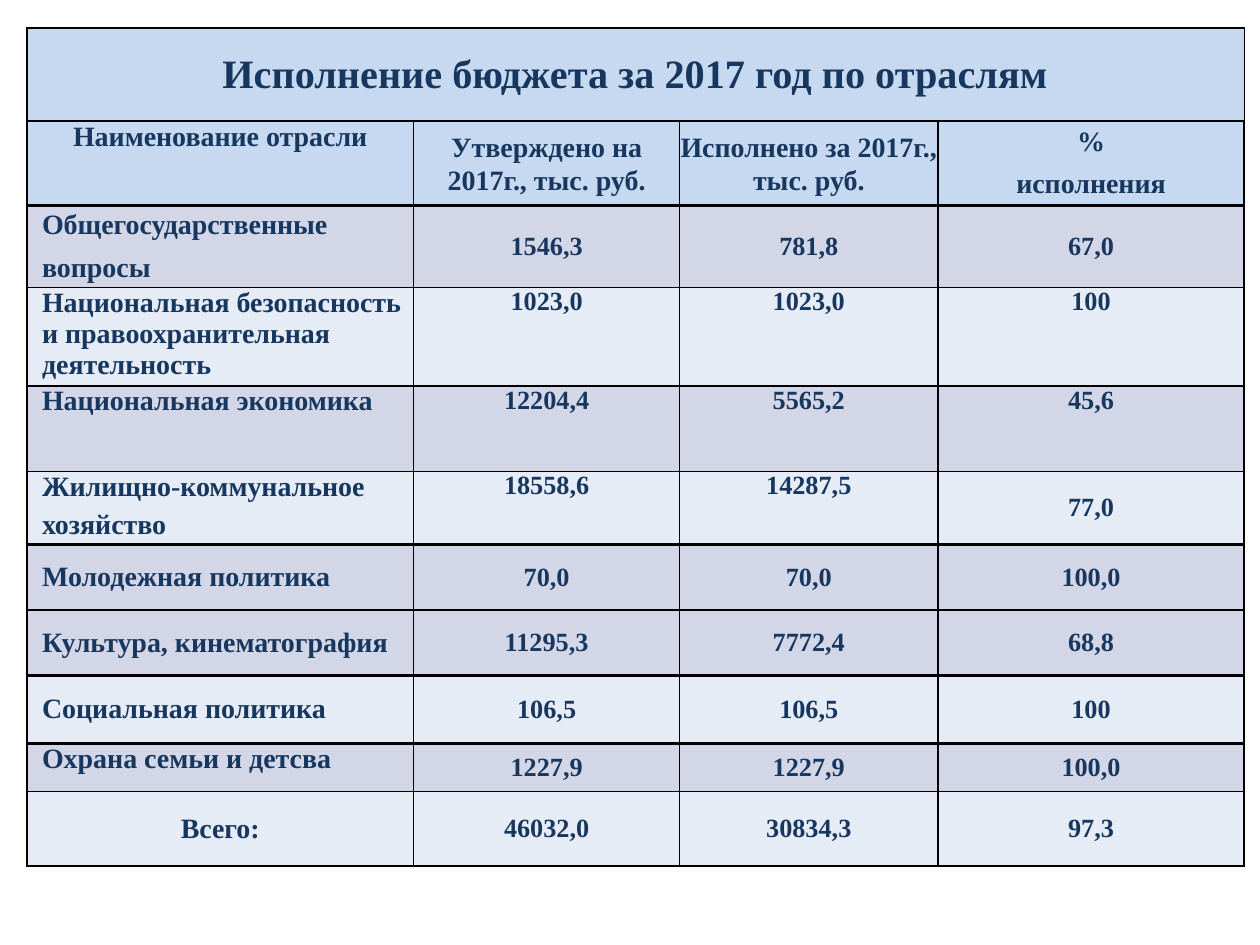
from pptx import Presentation
from pptx.dml.color import RGBColor as RGB
from pptx.enum.text import MSO_ANCHOR as Anchor, PP_ALIGN as Align
from pptx.oxml.ns import qn
from pptx.util import Pt
from lxml.etree import SubElement as Sub

FONT, INK, LINE = "Times New Roman", "17375E", "000000"
HEAD, DARK, PALE = "C6D9F1", "D2D6E7", "E6ECF6"
THICK, THIN = 1.5, 0.75
WIDTHS = [221, 152, 147.6, 175]

# Header cells: lines, line spacing, space after, anchored at top
HEADS = [
    (["Наименование отрасли"], None, 0, True),
    (["Утверждено на 2017г., тыс. руб."], 19.2, 0, False),
    (["Исполнено за 2017г., тыс. руб."], 19.2, 0, False),
    (["%", "исполнения"], None, 6.3, False),
]

# Branches: height, fill, bottom line, cells anchored at top, space after, name, values
ROWS = [
    (46.8, DARK, THIN, 0, 6.3, ["Общегосударственные", "вопросы"],
     ["1546,3", "781,8", "67,0"]),
    (56.2, PALE, THICK, 4, 0,
     ["Национальная безопасность и правоохранительная деятельность"],
     ["1023,0", "1023,0", "100"]),
    (49, DARK, THIN, 4, 0, ["Национальная экономика"],
     ["12204,4", "5565,2", "45,6"]),
    (41.8, PALE, THICK, 3, 4.2, ["Жилищно-коммунальное", "хозяйство"],
     ["18558,6", "14287,5", "77,0"]),
    (37.4, DARK, THIN, 0, 0, ["Молодежная политика"],
     ["70,0", "70,0", "100,0"]),
    (37.4, DARK, THICK, 0, 0, ["Культура, кинематография"],
     ["11295,3", "7772,4", "68,8"]),
    (38.9, PALE, THICK, 0, 0, ["Социальная политика"],
     ["106,5", "106,5", "100"]),
    (27.4, DARK, THIN, 1, 0, ["Охрана семьи и детсва"],
     ["1227,9", "1227,9", "100,0"]),
    (42.5, PALE, THICK, 0, 0, ["Всего:"],
     ["46032,0", "30834,3", "97,3"]),
]


def color(code):
    return RGB.from_string(code)


def border(cell, side, width):
    line = Sub(cell._tc.get_or_add_tcPr(), qn("a:ln" + side), w=str(Pt(width)))
    Sub(Sub(line, qn("a:solidFill")), qn("a:srgbClr"), val=LINE)


def frame(cell, col, above, below, fill):
    last = len(WIDTHS) - 1
    border(cell, "L", THICK if col == 0 else THIN)
    border(cell, "R", THICK if col == last else THIN)
    border(cell, "T", above)
    border(cell, "B", below)
    cell.fill.solid()
    cell.fill.fore_color.rgb = color(fill)


def write(cell, lines, size, top=False, indent=0, pitch=None, after=0):
    cell.margin_left = cell.margin_right = 0
    cell.margin_top = cell.margin_bottom = 0
    cell.vertical_anchor = Anchor.TOP if top else Anchor.MIDDLE
    text = cell.text_frame
    for i, line in enumerate(lines):
        para = text.add_paragraph() if i else text.paragraphs[0]
        para.alignment = Align.LEFT if indent else Align.CENTER
        if indent:
            para._p.get_or_add_pPr().set("marL", str(Pt(indent)))
        if pitch:
            para.line_spacing = Pt(pitch)
        if after and i < len(lines) - 1:
            para.space_after = Pt(after)
        run = para.add_run()
        run.text = line
        run.font.name, run.font.size, run.font.bold = FONT, Pt(size), True
        run.font.color.rgb = color(INK)


def make_grid(slide):
    tall = [53.3, 48.2] + [row[0] for row in ROWS]
    grid = slide.shapes.add_table(
        len(tall), len(WIDTHS), Pt(15.4), Pt(16),
        Pt(sum(WIDTHS)), Pt(sum(tall))).table
    grid.first_row = grid.horz_banding = False
    for col, width in zip(grid.columns, WIDTHS):
        col.width = Pt(width)
    for row, height in zip(grid.rows, tall):
        row.height = Pt(height)
    return grid


def fill_heads(grid):
    # Title across all columns
    for c in range(len(WIDTHS)):
        frame(grid.cell(0, c), c, THICK, THICK, HEAD)
    title = grid.cell(0, 0)
    title.merge(grid.cell(0, len(WIDTHS) - 1))
    write(title, ["Исполнение бюджета за 2017 год по отраслям"], 23)
    # Column headings
    for c, (lines, pitch, after, top) in enumerate(HEADS):
        cell = grid.cell(1, c)
        frame(cell, c, THICK, THICK, HEAD)
        write(cell, lines, 16, top, pitch=pitch, after=after)


def fill_rows(grid):
    above = THICK
    for r, (_, fill, below, tops, after, name, values) in enumerate(ROWS, 2):
        total = r == len(ROWS) + 1
        for c in range(len(WIDTHS)):
            cell = grid.cell(r, c)
            frame(cell, c, above, below, fill)
            if c == 0:
                write(cell, name, 16, c < tops, 0 if total else 8.64, after=after)
            else:
                write(cell, [values[c - 1]], 15, c < tops)
        above = below


def main():
    deck = Presentation()
    deck.slide_width, deck.slide_height = Pt(720), Pt(540)
    slide = deck.slides.add_slide(deck.slide_layouts[6])
    grid = make_grid(slide)
    fill_heads(grid)
    fill_rows(grid)
    deck.save("out.pptx")


if __name__ == "__main__":
    main()
